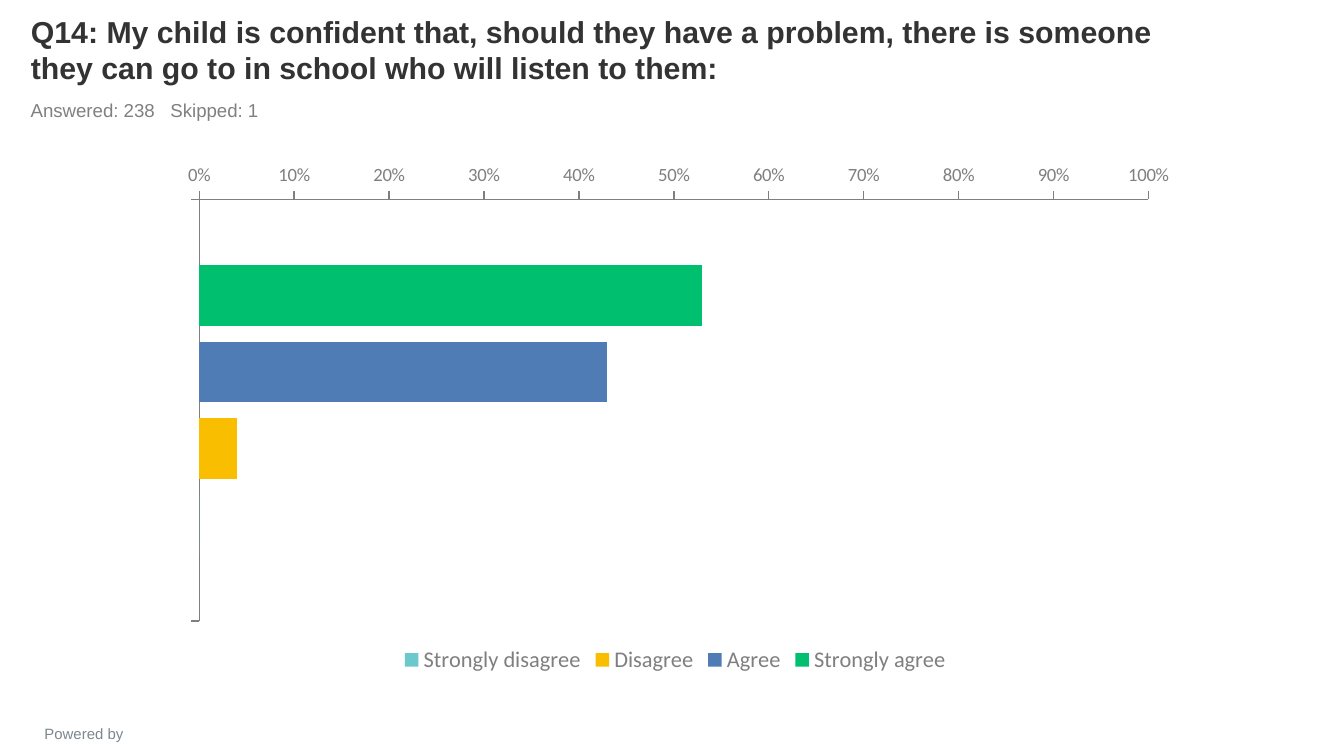
from pptx import Presentation, util as u
from pptx.chart.data import CategoryChartData
from pptx.dml.color import RGBColor
from pptx.enum import chart as ch, text as tx
from pptx.oxml import parse_xml
from pptx.oxml.ns import nsdecls

GREY = "7F7F7F"
deck = Presentation()
W = u.Inches(10)
H = W * 9 // 16
deck.slide_width, deck.slide_height = W, H
slide = deck.slides.add_slide(deck.slide_layouts[5])


def paint(font, hue, size, bold=False, face="Calibri"):
    font.name, font.size, font.bold = face, u.Pt(size), bold
    font.color.rgb = RGBColor.from_string(hue)


def write(box, words, hue, size, bold=False, align=tx.PP_ALIGN.LEFT,
          anchor=tx.MSO_ANCHOR.TOP, stop=None):
    frame = box.text_frame
    frame.word_wrap, frame.auto_size = True, tx.MSO_AUTO_SIZE.NONE
    frame.vertical_anchor = anchor
    para = frame.paragraphs[0]
    para.alignment = align
    if stop:
        para._p.get_or_add_pPr().append(parse_xml(
            f'<a:tabLst {nsdecls("a")}><a:tab pos="{u.Inches(stop)}" algn="l"/></a:tabLst>'))
    run = para.add_run()
    run.text = words
    paint(run.font, hue, size, bold, "Arial")


# Heading block: question and response count share a left edge and width
left, wide = int(W * 0.013), int(W * 0.9)
title = slide.shapes.title
title.left, title.top = left, u.Inches(0.09)
title.width, title.height = wide, u.Inches(0.6)
write(title, "Q14: My child is confident that, should they have a problem, "
      "there is someone they can go to in school who will listen to them:",
      "333333", 16.2, bold=True, anchor=tx.MSO_ANCHOR.BOTTOM)

count = slide.shapes.add_textbox(left, title.top + title.height, wide, u.Inches(0.26))
write(count, "Answered: 238\tSkipped: 1", "808080", 10, stop=1.04)

foot = slide.shapes.add_textbox(int(W * 0.005), int(H * 0.95), int(W * 0.115), u.Inches(0.18))
write(foot, "Powered by", "7C878E", 8, align=tx.PP_ALIGN.CENTER)

# Answers, best first
answers = [
    ("Strongly agree", 0.53, "00BF6F"),
    ("Agree", 0.43, "507CB6"),
    ("Disagree", 0.04, "F9BE00"),
    ("Strongly disagree", 0, "6BC8CD"),
]
data = CategoryChartData(number_format="0%")
data.categories = [" "]
for name, share, _ in answers:
    data.add_series(name, [share])

chart = slide.shapes.add_chart(
    ch.XL_CHART_TYPE.BAR_CLUSTERED, int(W * 0.12), u.Inches(1.15),
    int(W * 0.765), u.Inches(3.9), data).chart
chart.has_title = False
paint(chart.font, "333333", 18)

plot = chart.plots[0]
plot.gap_width, plot.overlap, plot.vary_by_categories = 219, -27, False
for bar, (_, _, hue) in zip(plot.series, answers):
    bar.format.fill.solid()
    bar.format.fill.fore_color.rgb = RGBColor.from_string(hue)

cats, vals = chart.category_axis, chart.value_axis
for axis in (cats, vals):
    axis.has_major_gridlines = False
    axis.major_tick_mark = ch.XL_TICK_MARK.OUTSIDE
    axis.minor_tick_mark = ch.XL_TICK_MARK.NONE
    axis.format.line.color.rgb = RGBColor.from_string(GREY)
    axis.format.line.width = u.Pt(0.75)
    paint(axis.tick_labels.font, GREY, 10)
# With the categories reversed, crossing after the last one is at the bottom
cats.reverse_order = True
cats.crosses_at = 2
cats.tick_label_position = ch.XL_TICK_LABEL_POSITION.LOW
vals.minimum_scale, vals.maximum_scale, vals.major_unit = 0, 1, 0.1
vals.tick_labels.number_format = "0%"
vals.tick_labels.number_format_is_linked = False

chart.has_legend = True
chart.legend.position = ch.XL_LEGEND_POSITION.BOTTOM
chart.legend.include_in_layout = False
paint(chart.legend.font, GREY, 12)

deck.save("out.pptx")
